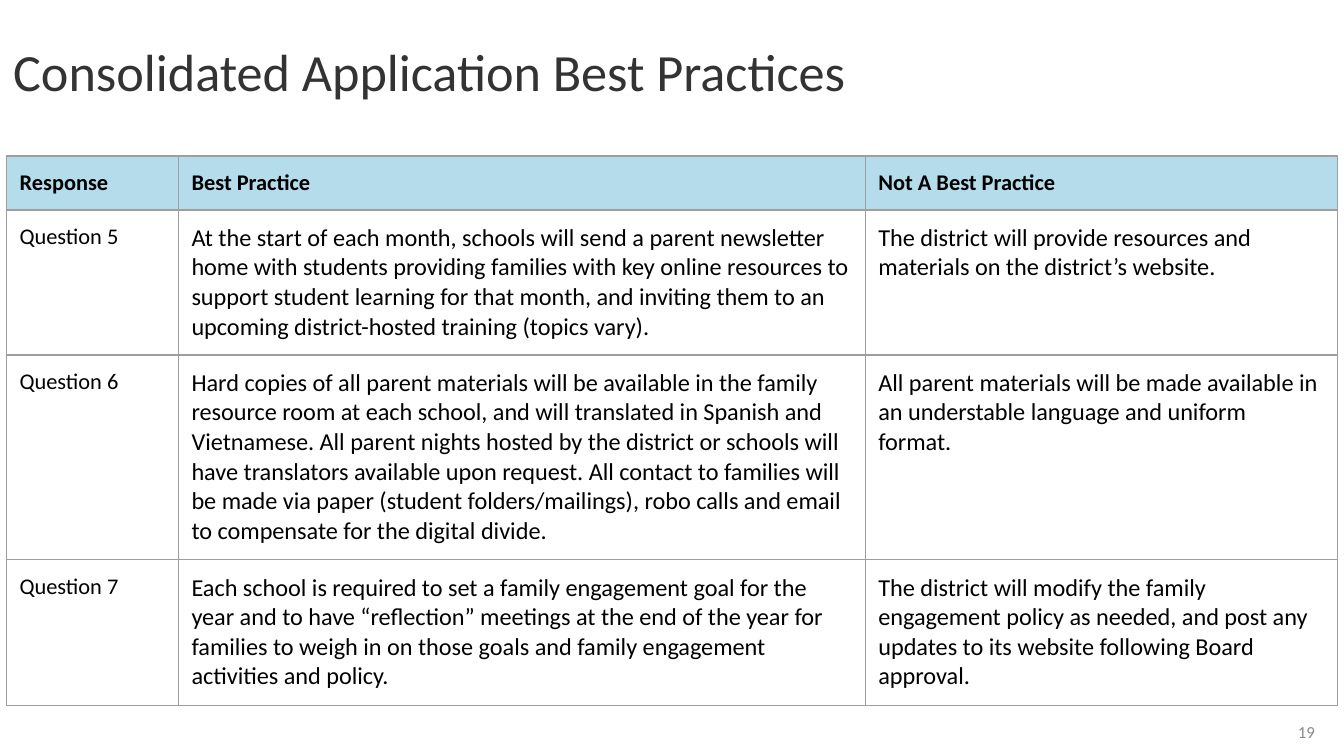
from dataclasses import dataclass

from lxml import etree
from pptx import Presentation
from pptx.dml.color import RGBColor
from pptx.enum import text as t
from pptx.oxml import ns
from pptx.util import Cm, Pt


@dataclass(frozen=True)
class Theme:
    font: str = "Calibri"
    ink: str = "000000"
    head: str = "333333"
    mute: str = "8A8A8A"
    band: str = "B5DCEA"
    page: str = "FFFFFF"
    rule: str = "9E9E9E"
    title: int = 28
    body: int = 13
    label: int = 12
    small: int = 9


THEME = Theme()
PAD = 0.25
COLS = 3.25, 12.98, 8.92
HEIGHTS = 1.02, 2.74, 3.87, 2.75
ROWS = [
    ("Response", "Best Practice", "Not A Best Practice"),
    ("Question 5",
     "At the start of each month, schools will send a parent newsletter home "
     "with students providing families with key online resources to support "
     "student learning for that month, and inviting them to an upcoming "
     "district-hosted training (topics vary).",
     "The district will provide resources and materials on the district’s "
     "website."),
    ("Question 6",
     "Hard copies of all parent materials will be available in the family "
     "resource room at each school, and will translated in Spanish and "
     "Vietnamese. All parent nights hosted by the district or schools will "
     "have translators available upon request. All contact to families will "
     "be made via paper (student folders/mailings), robo calls and email to "
     "compensate for the digital divide.",
     "All parent materials will be made available in an understable language "
     "and uniform format."),
    ("Question 7",
     "Each school is required to set a family engagement goal for the year "
     "and to have “reflection” meetings at the end of the year for families "
     "to weigh in on those goals and family engagement activities and policy.",
     "The district will modify the family engagement policy as needed, and "
     "post any updates to its website following Board approval."),
]


def apply(item, form):
    for name, value in form.items():
        setattr(item, name, value)


def pads(side, edge):
    return {"margin_left": Cm(side), "margin_right": Cm(side),
            "margin_top": Cm(edge), "margin_bottom": Cm(edge)}


def write(frame, words, size, color, bold=False, **form):
    """Fill a frame with one paragraph; form holds paragraph values."""
    para = frame.paragraphs[0]
    apply(para, form)
    run = para.add_run()
    run.text = words
    apply(run.font, {"name": THEME.font, "size": Pt(size), "bold": bold})
    run.font.color.rgb = RGBColor.from_string(color)


def add_title(slide, words):
    box = slide.shapes.title
    apply(box, {"left": Cm(0), "top": Cm(-0.05),
                "width": Cm(25.4), "height": Cm(2.92)})
    frame = box.text_frame
    apply(frame, {**pads(PAD, PAD), "word_wrap": True,
                  "auto_size": t.MSO_AUTO_SIZE.NONE,
                  "vertical_anchor": t.MSO_ANCHOR.MIDDLE})
    write(frame, words, THEME.title, THEME.head,
          alignment=t.PP_ALIGN.LEFT, line_spacing=0.9)


def add_page(slide, number):
    box = slide.shapes.add_textbox(Cm(18.9), Cm(13.34), Cm(6.2), Cm(0.97))
    frame = box.text_frame
    apply(frame, {**pads(PAD, PAD / 2), "word_wrap": True,
                  "vertical_anchor": t.MSO_ANCHOR.MIDDLE})
    write(frame, number, THEME.small, THEME.mute,
          alignment=t.PP_ALIGN.RIGHT)


def frame_cell(cell):
    """Draw a thin rule on all four sides of a cell."""
    props = cell._tc.get_or_add_tcPr()
    for spot, side in enumerate("LRTB"):
        line = etree.Element(ns.qn(f"a:ln{side}"), w=str(Pt(0.75)))
        fill = etree.SubElement(line, ns.qn("a:solidFill"))
        etree.SubElement(fill, ns.qn("a:srgbClr"), val=THEME.rule)
        props.insert(spot, line)


def add_grid(slide):
    table = slide.shapes.add_table(
        len(ROWS), len(COLS), Cm(0.12), Cm(2.95),
        Cm(sum(COLS)), Cm(sum(HEIGHTS))).table
    table.horz_banding = False
    for col, width in zip(table.columns, COLS):
        col.width = Cm(width)
    for row, height in zip(table.rows, HEIGHTS):
        row.height = Cm(height)
    for r, line in enumerate(ROWS):
        for c, words in enumerate(line):
            cell = table.cell(r, c)
            top = r == 0
            apply(cell, pads(PAD, PAD))
            cell.fill.solid()
            cell.fill.fore_color.rgb = RGBColor.from_string(
                THEME.band if top else THEME.page)
            frame_cell(cell)
            size = THEME.label if top or c == 0 else THEME.body
            write(cell.text_frame, words, size, THEME.ink, top)


def main():
    deck = Presentation()
    apply(deck, {"slide_width": Cm(25.4), "slide_height": Cm(14.29)})
    slide = deck.slides.add_slide(deck.slide_layouts[5])
    add_page(slide, "19")
    add_title(slide, "Consolidated Application Best Practices")
    add_grid(slide)
    deck.save("out.pptx")


if __name__ == "__main__":
    main()
